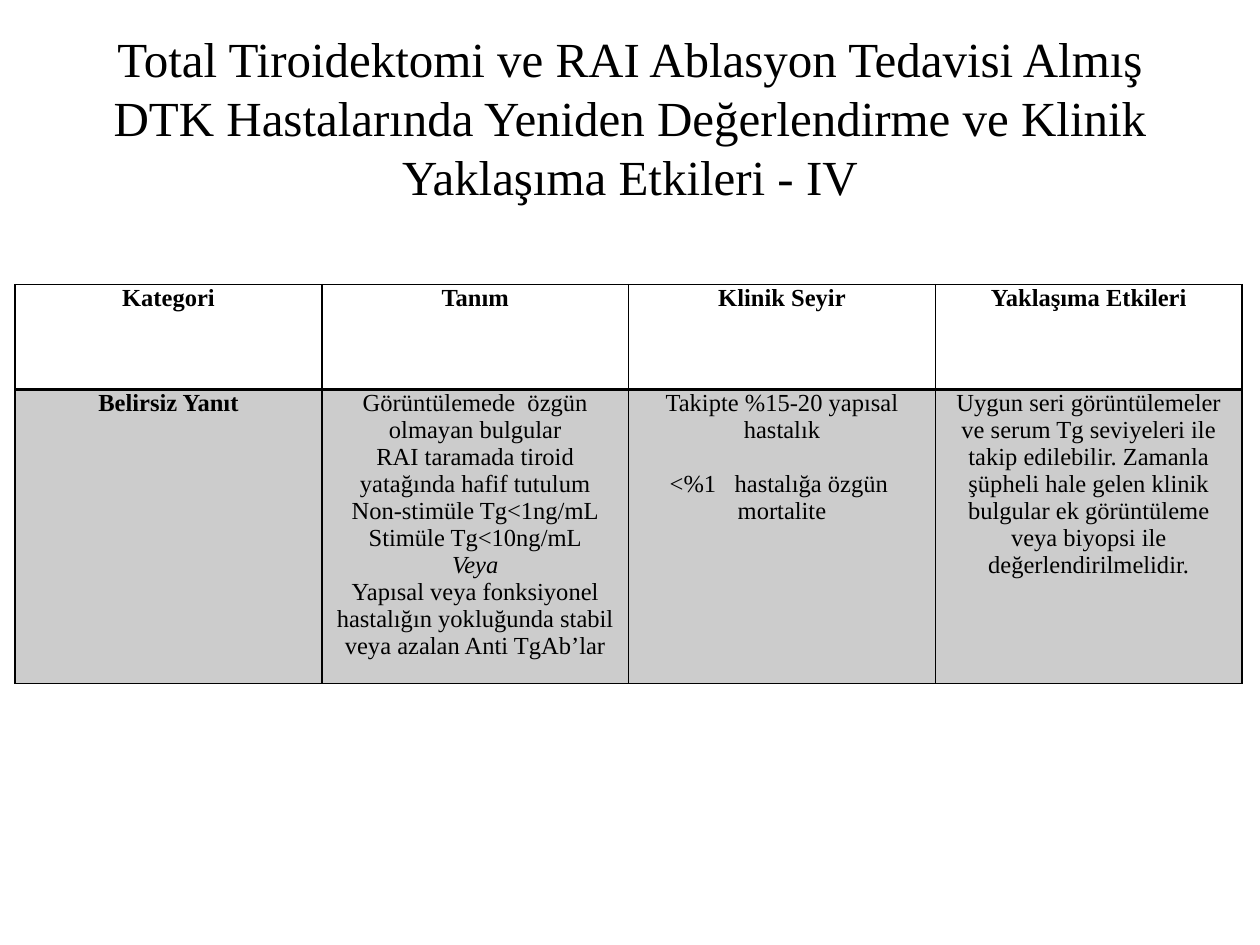
from lxml.etree import SubElement
from pptx import Presentation
from pptx.dml.color import RGBColor
from pptx.enum.text import MSO_ANCHOR, PP_ALIGN
from pptx.oxml.ns import qn
from pptx.util import Inches, Pt

COLORS = {"ink": "000000", "paper": "FFFFFF"}
FONT = "Times New Roman"


def style_paragraph(para, size, bold=False):
    para.alignment = PP_ALIGN.CENTER
    para.font.name = FONT
    para.font.size = Pt(size)
    para.font.bold = bold
    para.font.color.rgb = RGBColor.from_string(COLORS["ink"])


def add_borders(cell, widths):
    properties = cell._tc.get_or_add_tcPr()
    for side, width in widths.items():
        line = SubElement(properties, qn(f"a:ln{side}"), w=str(Pt(width)))
        fill = SubElement(line, qn("a:solidFill"))
        SubElement(fill, qn("a:srgbClr"), val=COLORS["ink"])


deck = Presentation()
deck.slide_width, deck.slide_height = Inches(10), Inches(7.5)
page = deck.slides.add_slide(deck.slide_layouts[6])
page.background.fill.solid()
page.background.fill.fore_color.rgb = RGBColor.from_string(COLORS["paper"])

# Title
box = page.shapes.add_textbox(Inches(0.5), Inches(0.3), Inches(9), Inches(1.25))
frame = box.text_frame
frame.word_wrap = True
frame.vertical_anchor = MSO_ANCHOR.MIDDLE
frame.text = (
    "Total Tiroidektomi ve RAI Ablasyon Tedavisi Almış DTK Hastalarında "
    "Yeniden Değerlendirme ve Klinik Yaklaşıma Etkileri - IV"
)
style_paragraph(frame.paragraphs[0], 28)

# Table text: one list of paragraphs per cell
rows = [
    [["Kategori"], ["Tanım"], ["Klinik Seyir"], ["Yaklaşıma Etkileri"]],
    [
        ["Belirsiz Yanıt"],
        [
            "Görüntülemede  özgün olmayan bulgular",
            "RAI taramada tiroid yatağında hafif tutulum",
            "Non-stimüle Tg<1ng/mL",
            "Stimüle Tg<10ng/mL",
            "Veya",
            "Yapısal veya fonksiyonel hastalığın yokluğunda stabil "
            "veya azalan Anti TgAb’lar",
        ],
        ["Takipte %15-20 yapısal hastalık", "<%1   hastalığa özgün  mortalite"],
        [
            "Uygun seri görüntülemeler ve serum Tg seviyeleri ile takip "
            "edilebilir. Zamanla şüpheli hale gelen klinik bulgular ek "
            "görüntüleme veya biyopsi ile değerlendirilmelidir."
        ],
    ],
]
row_heights = [0.83, 2.25]

# Table
table = page.shapes.add_table(
    len(rows), len(rows[0]), Inches(0.12), Inches(2.26),
    Inches(9.74), Inches(sum(row_heights)),
).table
table.first_row = table.horz_banding = False
for row, height in zip(table.rows, row_heights):
    row.height = Inches(height)

for row_index, row_cells in enumerate(rows):
    is_header = row_index == 0
    for column_index, lines in enumerate(row_cells):
        cell = table.cell(row_index, column_index)
        cell.margin_left = cell.margin_right = Inches(0.07)
        cell.margin_top = cell.margin_bottom = 0
        cell.text = "\n".join(lines)
        for para in cell.text_frame.paragraphs:
            style_paragraph(para, 14, bold=is_header or column_index == 0)
            para.font.italic = para.text == "Veya"
            if para.text.startswith("<%1"):
                para.space_before = Pt(15.5)

        # The heavy rule under the header is shared by both rows
        top, bottom = (1, 2) if is_header else (2, 1)
        add_borders(cell, {"L": 1, "R": 1, "T": top, "B": bottom})
        if is_header:
            cell.fill.background()
        else:
            cell.fill.solid()
            cell.fill.fore_color.rgb = RGBColor.from_string(COLORS["ink"])
            tint = cell._tc.tcPr.find(qn("a:solidFill")).find(qn("a:srgbClr"))
            SubElement(tint, qn("a:alpha"), val="20000")

deck.save("out.pptx")
